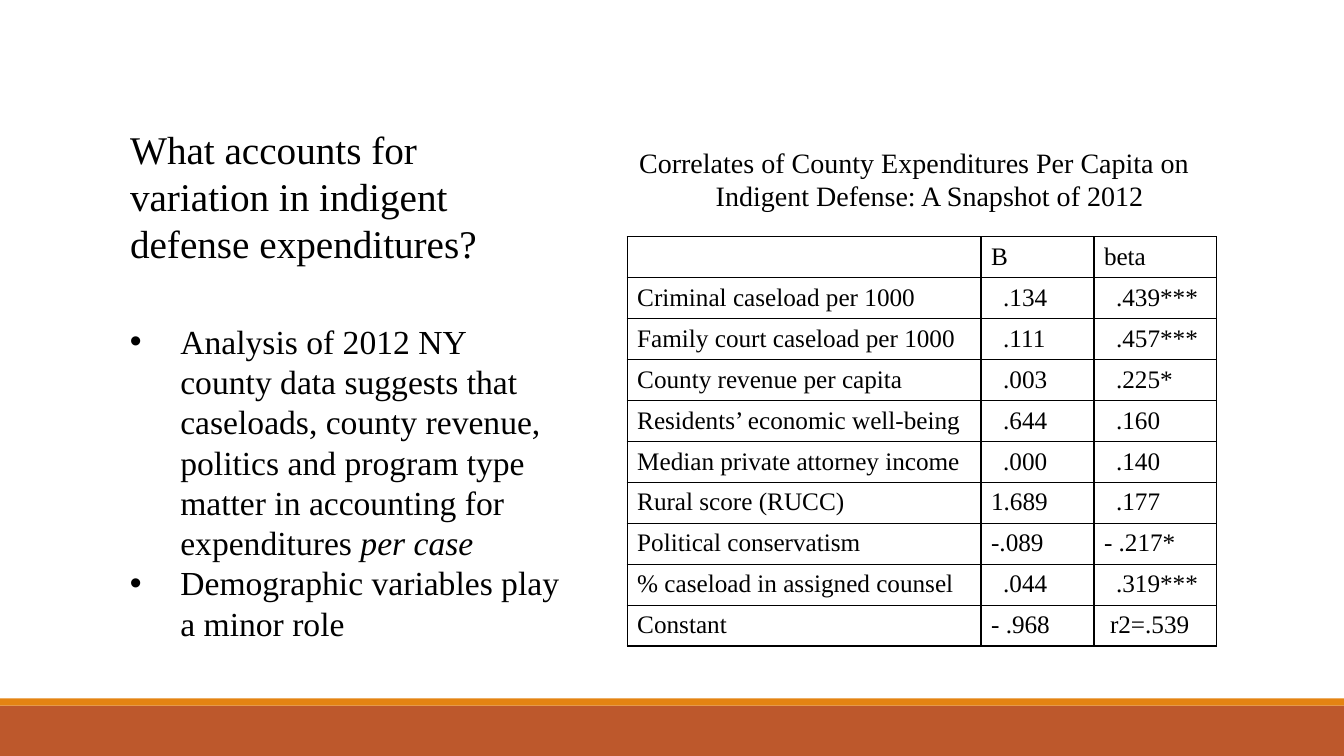
from lxml import etree
from pptx import Presentation
from pptx.dml.color import RGBColor
from pptx.enum import shapes, text
from pptx.oxml import ns
from pptx.util import Inches, Pt

FONT = "Times New Roman"
INK = "000000"


def color(hex_code):
    return RGBColor.from_string(hex_code)


def style(para, size, left=0, hanging=0, spacing=1.2):
    """Format a paragraph and its runs; left and hanging are inches."""
    para.alignment = text.PP_ALIGN.LEFT
    para.line_spacing = Pt(size * spacing)
    para.font.size = Pt(size)
    props = para._p.get_or_add_pPr()
    props.set("marL", str(Inches(left)))
    props.set("indent", str(Inches(-hanging)))
    for span in para.runs:
        span.font.name = FONT
        span.font.size = Pt(size)
        span.font.color.rgb = color(INK)


deck = Presentation()
deck.slide_width, deck.slide_height = Inches(13.33), Inches(7.5)
page = deck.slides.add_slide(deck.slide_layouts[5])

# Footer bands
for top, height, fill in [(7, 0.5, "BD582C"), (6.93, 0.07, "E48312")]:
    band = page.shapes.add_shape(shapes.MSO_SHAPE.RECTANGLE, 0, Inches(top),
                                 deck.slide_width, Inches(height))
    band.shadow.inherit = False
    band.fill.solid()
    band.fill.fore_color.rgb = color(fill)
    band.line.fill.background()

# Title
title = page.shapes.title
title.left, title.top = Inches(1.19), Inches(1.19)
title.width, title.height = Inches(4.48), Inches(1.5)
frame = title.text_frame
frame.text = "What accounts for variation in indigent defense expenditures?"
frame.word_wrap = True
frame.auto_size = text.MSO_AUTO_SIZE.NONE
frame.vertical_anchor = text.MSO_ANCHOR.TOP
style(frame.paragraphs[0], 28)

# Findings
findings = [
    [("Analysis of 2012 NY county data suggests that caseloads, county revenue, "
      "politics and program type matter in accounting for expenditures ", False),
     ("per case", True)],
    [("Demographic variables play a minor role", False)],
]
box = page.shapes.add_textbox(Inches(1.19), Inches(3.13), Inches(4.48), Inches(3.45))
frame = box.text_frame
frame.word_wrap = True
for index, spans in enumerate(findings):
    para = frame.add_paragraph() if index else frame.paragraphs[0]
    for words, italic in spans:
        span = para.add_run()
        span.text = words
        span.font.italic = italic
    style(para, 24, left=0.5, hanging=0.5)
    props = para._p.get_or_add_pPr()
    bullet_font = etree.Element(ns.qn("a:buFont"), typeface="Arial")
    bullet = etree.Element(ns.qn("a:buChar"), char="•")
    props.find(ns.qn("a:lnSpc")).addnext(bullet_font)
    bullet_font.addnext(bullet)

# Table caption
caption = page.shapes.add_textbox(Inches(6.24), Inches(1.39), Inches(5.79), Inches(0.77))
frame = caption.text_frame
frame.word_wrap = True
frame.text = ("Correlates of County Expenditures Per Capita on\n"
              "Indigent Defense: A Snapshot of 2012")
for para, left in zip(frame.paragraphs, (0, 0.76)):
    style(para, 20, left=left)

# Regression table
rows = [
    ("", "B", "beta"),
    ("Criminal caseload per 1000", ".134", ".439***"),
    ("Family court caseload per 1000", ".111", ".457***"),
    ("County revenue per capita", ".003", ".225*"),
    ("Residents’ economic well-being", ".644", ".160"),
    ("Median private attorney income", ".000", ".140"),
    ("Rural score (RUCC)", "1.689", ".177"),
    ("Political conservatism", "-.089", "- .217*"),
    ("% caseload in assigned counsel", ".044", ".319***"),
    ("Constant", "- .968", "r2=.539"),
]
widths = (3.51, 1.12, 1.22)
table = page.shapes.add_table(len(rows), len(widths), Inches(6.22), Inches(2.35),
                              Inches(sum(widths)), Inches(4.06)).table
table.first_row = table.horz_banding = False
for column, width in zip(table.columns, widths):
    column.width = Inches(width)
for row, values in zip(table.rows, rows):
    row.height = Inches(4.06 / len(rows))
    for cell, value in zip(row.cells, values):
        cell.text = value
        # Values without a leading digit or sign are set in
        left = 0.12 if value.startswith(".") else 0.06 if value.startswith("r2") else 0
        style(cell.text_frame.paragraphs[0], 18, left=left, spacing=1.15)
        cell_props = cell._tc.get_or_add_tcPr()
        for side in ("lnL", "lnR", "lnT", "lnB"):
            border = etree.SubElement(cell_props, ns.qn("a:" + side), w=str(Pt(1)))
            ink = etree.SubElement(border, ns.qn("a:solidFill"))
            etree.SubElement(ink, ns.qn("a:srgbClr"), val=INK)
        cell.fill.background()

deck.save("out.pptx")
